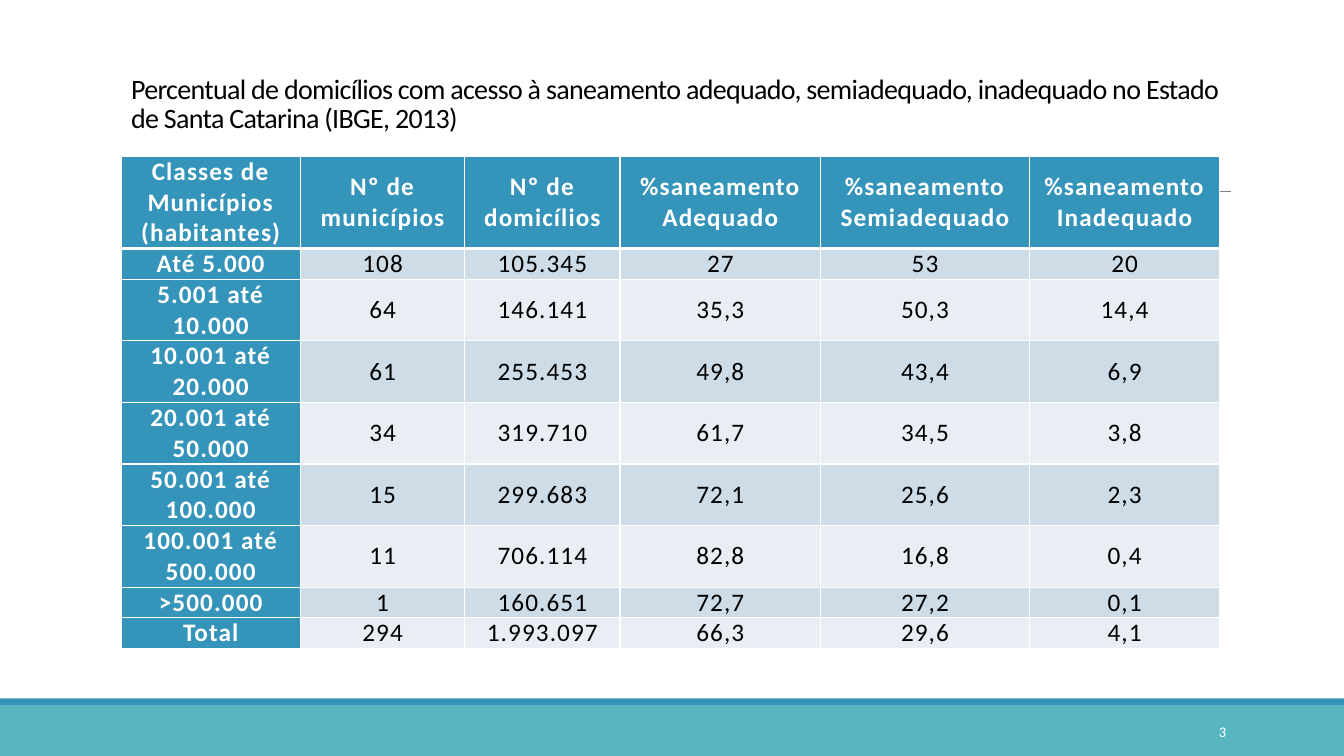
from lxml import etree
from pptx import Presentation
from pptx.dml.color import RGBColor
from pptx.enum.shapes import MSO_CONNECTOR, MSO_SHAPE
from pptx.enum.text import MSO_ANCHOR, MSO_AUTO_SIZE, PP_ALIGN
from pptx.oxml.ns import qn
from pptx.util import Inches, Pt

RECTANGLE = MSO_SHAPE.RECTANGLE
STRAIGHT = MSO_CONNECTOR.STRAIGHT
MIDDLE = MSO_ANCHOR.MIDDLE
BOTTOM = MSO_ANCHOR.BOTTOM
LEFT, CENTER, RIGHT = PP_ALIGN.LEFT, PP_ALIGN.CENTER, PP_ALIGN.RIGHT
NO_AUTOFIT = MSO_AUTO_SIZE.NONE

COLORS = {
    "blue": "3494BA",
    "teal": "58B6C0",
    "dark_band": "CEDCE7",
    "light_band": "E8EEF3",
    "rule": "808080",
    "white": "FFFFFF",
    "black": "000000",
}


def write_text(paragraph, text, size, color, alignment, spacing=0, bold=False):
    paragraph.alignment = alignment
    run = paragraph.add_run()
    run.text = text
    run.font.name = "Calibri"
    run.font.size = Pt(size)
    run.font.bold = bold
    run.font.color.rgb = RGBColor.from_string(COLORS[color])
    if spacing:
        run._r.get_or_add_rPr().set("spc", str(spacing))


def set_borders(cell, top, bottom):
    properties = cell._tc.get_or_add_tcPr()
    borders = [("a:lnL", 1), ("a:lnR", 1), ("a:lnT", top), ("a:lnB", bottom)]
    for position, (tag, width) in enumerate(borders):
        line = etree.Element(qn(tag), w=str(Pt(width)))
        fill = etree.SubElement(line, qn("a:solidFill"))
        etree.SubElement(fill, qn("a:srgbClr"), val=COLORS["white"])
        properties.insert(position, line)


presentation = Presentation()
presentation.slide_width = Inches(13.33)
presentation.slide_height = Inches(7.5)
slide = presentation.slides.add_slide(presentation.slide_layouts[5])

for color, top, height in [("teal", 7, 0.5), ("blue", 6.93, 0.07)]:
    band = slide.shapes.add_shape(
        RECTANGLE, Inches(0), Inches(top), Inches(13.33), Inches(height)
    )
    band.shadow.inherit = False
    band.fill.solid()
    band.fill.fore_color.rgb = RGBColor.from_string(COLORS[color])
    band.line.fill.background()

rule = slide.shapes.add_connector(
    STRAIGHT, Inches(1.31), Inches(1.9), Inches(12.21), Inches(1.9)
)
rule.line.color.rgb = RGBColor.from_string(COLORS["rule"])
rule.line.width = Pt(0.5)
etree.SubElement(rule._element.spPr, qn("a:effectLst"))

title = slide.shapes.title
title.left, title.top = Inches(1.2), Inches(0.61)
title.width, title.height = Inches(11), Inches(0.77)
title.text_frame.auto_size = NO_AUTOFIT
title.text_frame.word_wrap = True
title.text_frame.vertical_anchor = BOTTOM
title_paragraph = title.text_frame.paragraphs[0]
title_paragraph.line_spacing = 0.85
write_text(
    title_paragraph,
    "Percentual de domicílios com acesso à saneamento adequado, semiadequado, "
    "inadequado no Estado de Santa Catarina (IBGE, 2013)",
    20, "black", LEFT, spacing=-50,
)

rows = [
    ["Classes de Municípios (habitantes)", "Nº de municípios", "Nº de domicílios",
     "%saneamento Adequado", "%saneamento Semiadequado", "%saneamento Inadequado"],
    ["Até 5.000", "108", "105.345", "27", "53", "20"],
    ["5.001 até 10.000", "64", "146.141", "35,3", "50,3", "14,4"],
    ["10.001 até 20.000", "61", "255.453", "49,8", "43,4", "6,9"],
    ["20.001 até 50.000", "34", "319.710", "61,7", "34,5", "3,8"],
    ["50.001 até 100.000", "15", "299.683", "72,1", "25,6", "2,3"],
    ["100.001 até 500.000", "11", "706.114", "82,8", "16,8", "0,4"],
    [">500.000", "1", "160.651", "72,7", "27,2", "0,1"],
    ["Total", "294", "1.993.097", "66,3", "29,6", "4,1"],
]
column_widths = [1.78, 1.63, 1.54, 1.99, 2.07, 1.89]
row_heights = [0.91, 0.3] + [0.61] * 5 + [0.3] * 2
last_column = len(column_widths) - 1

table = slide.shapes.add_table(
    len(rows), len(column_widths), Inches(1.2), Inches(1.55),
    Inches(sum(column_widths)), Inches(sum(row_heights)),
).table
table.first_col = True
for column, width in zip(table.columns, column_widths):
    column.width = Inches(width)

for row_index, values in enumerate(rows):
    table.rows[row_index].height = Inches(row_heights[row_index])
    band_color = "dark_band" if row_index % 2 else "light_band"
    for column_index, value in enumerate(values):
        is_header = row_index == 0 or column_index == 0
        cell = table.cell(row_index, column_index)
        cell.fill.solid()
        cell.fill.fore_color.rgb = RGBColor.from_string(
            COLORS["blue" if is_header else band_color]
        )
        cell.vertical_anchor = MIDDLE
        cell.margin_left = cell.margin_right = Inches(0.07)
        cell.margin_top = cell.margin_bottom = Inches(0)
        set_borders(cell, 3 if row_index == 1 else 1, 3 if row_index == 0 else 1)
        paragraph = cell.text_frame.paragraphs[0]
        if column_index == 0:
            paragraph.space_before = Pt(3)
        elif column_index == last_column:
            paragraph.space_after = Pt(3)
        write_text(
            paragraph, value, 18, "white" if is_header else "black", CENTER,
            spacing=80, bold=is_header,
        )

page_number = slide.shapes.add_textbox(
    Inches(10.83), Inches(7.06), Inches(1.43), Inches(0.4)
)
page_number.text_frame.word_wrap = True
page_number.text_frame.vertical_anchor = MIDDLE
write_text(page_number.text_frame.paragraphs[0], "3", 10.5, "white", RIGHT)

presentation.save("out.pptx")
